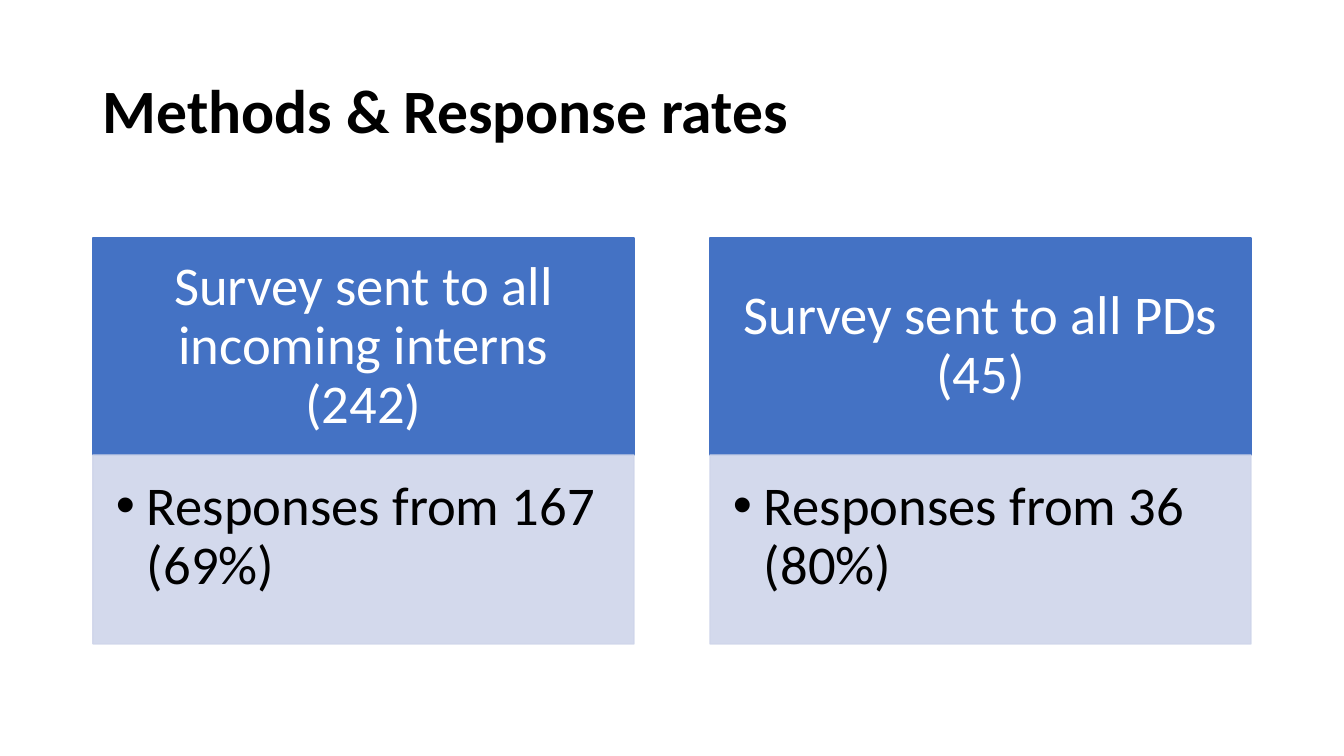
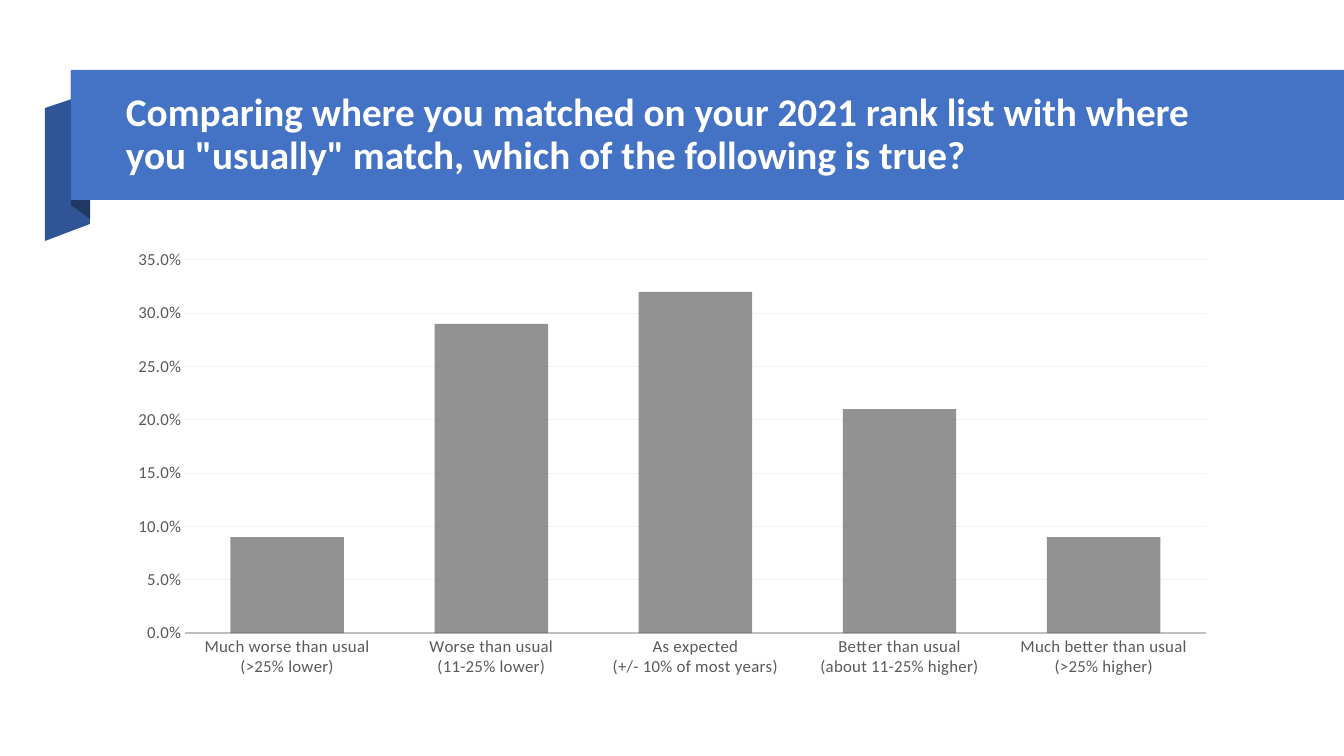
from dataclasses import dataclass

from lxml import etree
from pptx import Presentation
from pptx.chart.data import CategoryChartData
from pptx.dml.color import RGBColor
from pptx.enum.chart import XL_CHART_TYPE, XL_TICK_MARK
from pptx.enum.shapes import MSO_SHAPE
from pptx.enum.text import MSO_ANCHOR, PP_ALIGN
from pptx.oxml.ns import qn
from pptx.util import Pt

PX = 914400 / 100.8
RECTANGLE = MSO_SHAPE.RECTANGLE
COLUMN_CLUSTERED = XL_CHART_TYPE.COLUMN_CLUSTERED
NO_TICK = XL_TICK_MARK.NONE
TOP, MIDDLE = MSO_ANCHOR.TOP, MSO_ANCHOR.MIDDLE
LEFT, CENTER = PP_ALIGN.LEFT, PP_ALIGN.CENTER


@dataclass(frozen=True)
class Theme:
    font: str = "Calibri"
    bullet_font: str = "Arial"
    black: RGBColor = RGBColor.from_string("000000")
    white: RGBColor = RGBColor.from_string("FFFFFF")
    blue: RGBColor = RGBColor.from_string("4472C4")
    pale: RGBColor = RGBColor.from_string("CFD5EA")
    ribbon: RGBColor = RGBColor.from_string("2F5597")
    fold: RGBColor = RGBColor.from_string("203864")
    column: RGBColor = RGBColor.from_string("646464")
    label: RGBColor = RGBColor.from_string("595959")
    axis: RGBColor = RGBColor.from_string("BFBFBF")
    grid: RGBColor = RGBColor.from_string("F2F2F2")
    title_size: int = 44
    band_size: int = 28
    card_size: int = 39
    axis_size: int = 12


theme = Theme()


def write_text(shape, text, size, color, bold=False, align=LEFT, anchor=MIDDLE, insets=(10, 5, 10, 5)):
    frame = shape.text_frame
    frame.text = text
    frame.word_wrap = True
    frame.vertical_anchor = anchor
    frame.margin_left, frame.margin_top, frame.margin_right, frame.margin_bottom = [
        round(inset * PX) for inset in insets
    ]
    paragraph = frame.paragraphs[0]
    paragraph.alignment = align
    paragraph.line_spacing = 0.9
    font = paragraph.runs[0].font
    font.name, font.size, font.bold = theme.font, Pt(size), bold
    font.color.rgb = color
    return paragraph


def set_opacity(properties, percent):
    for color in properties.iter(qn("a:srgbClr")):
        etree.SubElement(color, qn("a:alpha"), val=str(percent * 1000))


presentation = Presentation()
presentation.slide_width = round(1344 * PX)
presentation.slide_height = round(756 * PX)
blank_layout = presentation.slide_layouts[6]

slide = presentation.slides.add_slide(blank_layout)
title = slide.shapes.add_textbox(*[round(length * PX) for length in (93, 41, 1159, 146)])
write_text(title, "Methods & Response rates", theme.title_size, theme.black, bold=True)

cards = [
    ("Survey sent to all incoming interns (242)", "Responses from 167 (69%)"),
    ("Survey sent to all PDs (45)", "Responses from 36 (80%)"),
]
for index, (heading, response) in enumerate(cards):
    left = 93 + index * 617
    panels = []
    for top, height, color in [(238, 217, theme.blue), (455, 189, theme.pale)]:
        panel = slide.shapes.add_shape(
            RECTANGLE, *[round(length * PX) for length in (left, top, 541, height)]
        )
        panel.shadow.inherit = False
        panel.fill.solid()
        panel.fill.fore_color.rgb = color
        panel.line.color.rgb = color
        panel.line.width = Pt(1)
        panels.append(panel)
    header, body = panels
    set_opacity(body._element.spPr, 90)
    write_text(header, heading, theme.card_size, theme.white, align=CENTER, insets=(30, 17, 30, 17))
    paragraph = write_text(
        body, response, theme.card_size, theme.black, anchor=TOP, insets=(23, 23, 30, 34)
    )
    properties = paragraph._p.get_or_add_pPr()
    properties.set("marL", str(round(31 * PX)))
    properties.set("indent", str(round(-31 * PX)))
    etree.SubElement(properties, qn("a:buFont"), typeface=theme.bullet_font)
    etree.SubElement(properties, qn("a:buChar"), char="•")

slide = presentation.slides.add_slide(blank_layout)
ribbon_parts = [
    (theme.ribbon, [(90, 224), (45, 241), (45, 108), (90, 93)]),
    (theme.fold, [(90, 219), (71, 205), (71, 71), (90, 86)]),
    (theme.blue, None),
]
for color, points in ribbon_parts:
    if points:
        builder = slide.shapes.build_freeform(*points[0], scale=PX)
        builder.add_line_segments(points[1:], close=True)
        part = builder.convert_to_shape()
    else:
        part = slide.shapes.add_shape(
            RECTANGLE, *[round(length * PX) for length in (71, 70, 1273, 130)]
        )
    part.shadow.inherit = False
    part.fill.solid()
    part.fill.fore_color.rgb = color
    part.line.fill.background()

title = slide.shapes.add_textbox(*[round(length * PX) for length in (116, 87, 1136, 97)])
write_text(
    title,
    'Comparing where you matched on your 2021 rank list with where you "usually" match, '
    "which of the following is true?",
    theme.band_size,
    theme.white,
    bold=True,
)

chart_data = CategoryChartData(number_format="0.0%")
chart_data.categories = [
    "Much worse than usual\n(>25% lower)",
    "Worse than usual\n(11-25% lower)",
    "As expected\n(+/- 10% of most years)",
    "Better than usual\n(about 11-25% higher)",
    "Much better than usual\n(>25% higher)",
]
chart_data.add_series("Series 1", (0.09, 0.29, 0.32, 0.21, 0.09))
chart = slide.shapes.add_chart(
    COLUMN_CLUSTERED, *[round(length * PX) for length in (116, 241, 1112, 445)], chart_data
).chart
chart.has_legend = False
chart.has_title = False
chart.font.name = theme.font
chart.font.size = Pt(theme.axis_size)
chart.font.color.rgb = theme.label

plot = chart.plots[0]
plot.gap_width = 80
plot.overlap = 25
plot.vary_by_categories = False
series = plot.series[0]
series.format.fill.solid()
series.format.fill.fore_color.rgb = theme.column
set_opacity(series._element.get_or_add_spPr(), 70)

category_axis, value_axis = chart.category_axis, chart.value_axis
for axis in (category_axis, value_axis):
    axis.major_tick_mark = NO_TICK
    axis.minor_tick_mark = NO_TICK
    font = axis.tick_labels.font
    font.name, font.size = theme.font, Pt(theme.axis_size)
    font.color.rgb = theme.label
    for properties in axis._element.iter(qn("a:defRPr")):
        properties.set("spc", "20")
category_axis.format.line.color.rgb = theme.axis
category_axis.format.line.width = Pt(1.25)
value_axis.format.line.fill.background()
value_axis.minimum_scale = 0
value_axis.maximum_scale = 0.35
value_axis.major_unit = 0.05
value_axis.tick_labels.number_format = "0.0%"
value_axis.tick_labels.number_format_is_linked = False
value_axis.major_gridlines.format.line.color.rgb = theme.grid
value_axis.major_gridlines.format.line.width = Pt(0.75)

presentation.save("out.pptx")
